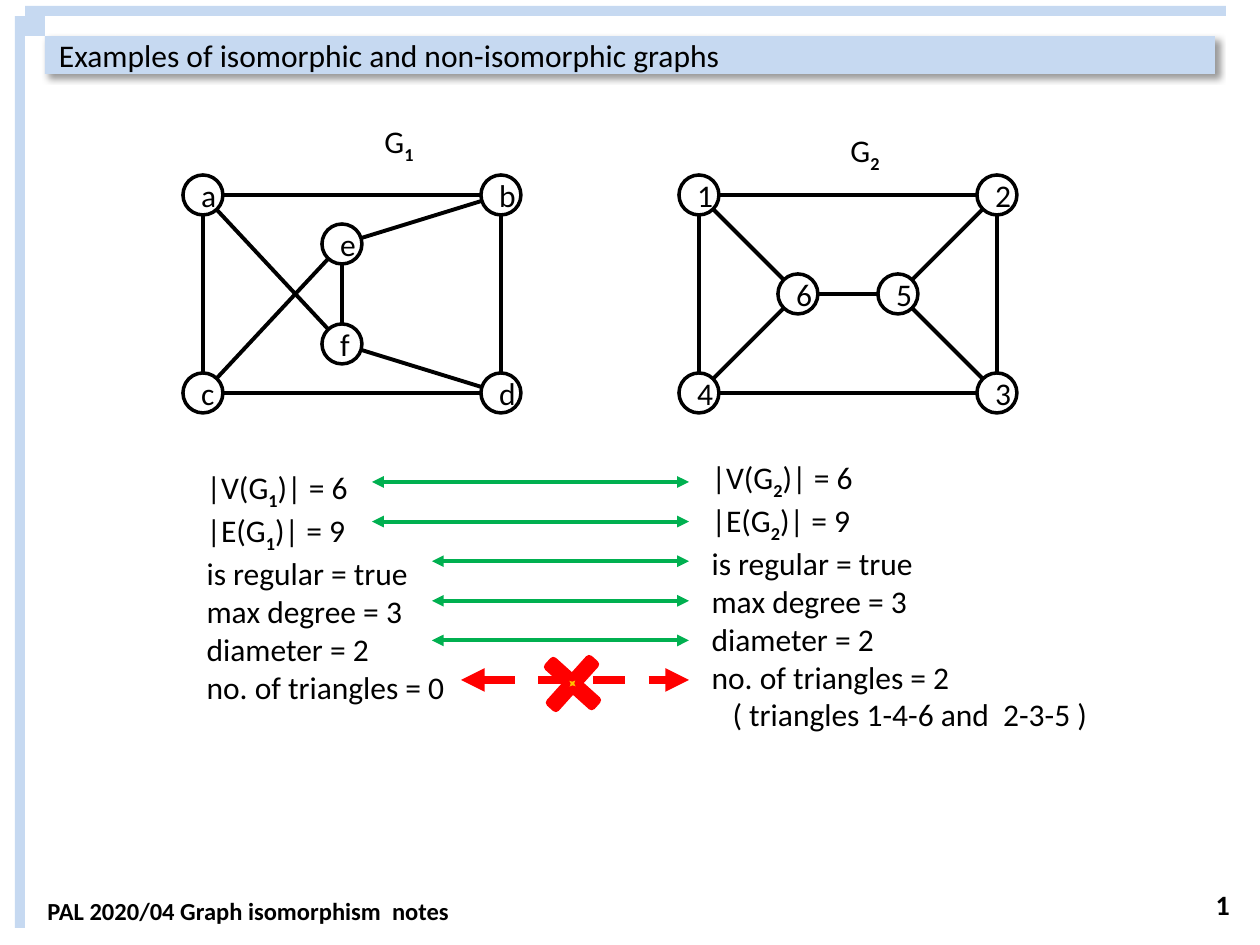
"""Build a slide comparing the invariants of two small graphs."""
from dataclasses import dataclass

from lxml.etree import SubElement
from pptx import Presentation
from pptx.dml.color import RGBColor
from pptx.enum.dml import MSO_LINE
from pptx.enum.shapes import MSO_CONNECTOR, MSO_SHAPE
from pptx.enum.text import MSO_ANCHOR, MSO_AUTO_SIZE, PP_ALIGN
from pptx.oxml import parse_xml
from pptx.oxml.ns import nsdecls, qn
from pptx.util import Emu, Pt


@dataclass(frozen=True)
class Theme:
    font: str = "Calibri"
    ink: str = "000000"
    paper: str = "FFFFFF"
    band: str = "C6D9F1"
    match: str = "00B050"
    differ: str = "FF0000"
    cross: str = "FFC000"
    body: int = 18
    number: int = 16
    footer: int = 14
    edge: float = 2.25
    outline: float = 2
    heavy: float = 4.5


T = Theme()
TITLE = "Examples of isomorphic and non-isomorphic graphs"
TITLE_BOX = (45, 36, 1170, 38)
FOOTER = "PAL 2020/04 Graph isomorphism  notes"
BARS = [(25, 6, 1201, 10), (15, 16, 10, 912), (25, 16, 20, 20)]
GRAPHS = [
    {
        "label": "G_1", "label_at": (372, 116), "origin": (203, 195),
        "nodes": {"a": (0, 0), "b": (298, 0), "c": (0, 198),
                  "d": (298, 198), "e": (139, 49), "f": (139, 149)},
        "edges": "ab cd db ca ef eb fd ce af",
        "list_box": (194, 462, 307, 242),
        "facts": ["|V(G_1)| = 6", "|E(G_1)| = 9", "is regular = true",
                  "max degree = 3", "diameter = 2", "no. of triangles = 0"],
        "note": None,
    },
    {
        "label": "G_2", "label_at": (838, 125), "origin": (699, 195),
        "nodes": {"1": (0, 0), "2": (298, 0), "3": (298, 198),
                  "4": (0, 198), "5": (199, 99), "6": (99, 99)},
        "edges": "12 43 32 41 65 52 53 46 16",
        "list_box": (699, 452, 476, 280),
        "facts": ["|V(G_2)| = 6", "|E(G_2)| = 9", "is regular = true",
                  "max degree = 3", "diameter = 2", "no. of triangles = 2"],
        "note": "( triangles 1-4-6 and  2-3-5 )",
    },
]
NODE = 40
ARROW_STARTS = [372, 372, 432, 432, 432, 461]
ARROW_END, ARROW_TOP, ARROW_SPAN = 689, 482, 198
CROSS_BOX = (543, 654, 59, 59)


def px(n):
    return Emu(round(n * 914400 / 126))


def place(sp, box):
    sp.left, sp.top, sp.width, sp.height = map(px, box)


def style(r, size=T.body, bold=False):
    r.font.name, r.font.size, r.font.bold = T.font, Pt(size), bold
    r.font.color.rgb = RGBColor.from_string(T.ink)


def write(p, text, size=T.body, bold=False):
    """Fill a paragraph; the character after each underscore is a subscript."""
    head, *rest = text.split("_")
    pieces = [(head, False)]
    for part in rest:
        pieces += [(part[0], True), (part[1:], False)]
    for piece, sub in pieces:
        if piece:
            r = p.add_run()
            r.text = piece
            style(r, size, bold or sub)
            if sub:
                r.font._element.set("baseline", "-25000")


def add_text(s, box, text, size=T.body, bold=False):
    tf = s.shapes.add_textbox(*map(px, box)).text_frame
    tf.word_wrap = True
    write(tf.paragraphs[0], text, size, bold)
    return tf


def add_shape(s, kind, box, fill, line=None, width=0):
    sp = s.shapes.add_shape(kind, *map(px, box))
    sp.shadow.inherit = False
    sp.fill.solid()
    sp.fill.fore_color.rgb = RGBColor.from_string(fill)
    if line:
        sp.line.color.rgb = RGBColor.from_string(line)
        sp.line.width = Pt(width)
    else:
        sp.line.fill.background()
    return sp


def add_line(s, start, end, color, width, dash=None, arrows=False):
    cx = s.shapes.add_connector(MSO_CONNECTOR.STRAIGHT, *map(px, start + end))
    cx.line.color.rgb = RGBColor.from_string(color)
    cx.line.width = Pt(width)
    if dash:
        cx.line.dash_style = dash
    if arrows:
        for tag in ("a:headEnd", "a:tailEnd"):
            SubElement(cx.line._get_or_add_ln(), qn(tag), type="triangle")
    SubElement(cx._element.spPr, qn("a:effectLst"))


def set_title(sp):
    place(sp, TITLE_BOX)
    sp.fill.solid()
    sp.fill.fore_color.rgb = RGBColor.from_string(T.band)
    sp.line.fill.background()
    sp._element.spPr.append(parse_xml(
        f'<a:effectLst {nsdecls("a")}><a:outerShdw blurRad="{Pt(4)}" '
        f'dist="{Pt(3)}" dir="2700000" algn="tl" rotWithShape="0">'
        f'<a:srgbClr val="{T.ink}"><a:alpha val="40000"/></a:srgbClr>'
        '</a:outerShdw></a:effectLst>'))
    tf = sp.text_frame
    tf.auto_size = MSO_AUTO_SIZE.NONE
    tf.vertical_anchor = MSO_ANCHOR.MIDDLE
    tf.margin_left = px(14)
    tf.margin_right = tf.margin_top = tf.margin_bottom = 0
    tf.text = TITLE
    tf.paragraphs[0].alignment = PP_ALIGN.LEFT
    style(tf.paragraphs[0].runs[0])


def set_facts(sp, graph):
    place(sp, graph["list_box"])
    tf = sp.text_frame
    tf.auto_size = MSO_AUTO_SIZE.NONE
    rows = [(fact, 0) for fact in graph["facts"]]
    if graph["note"]:
        rows.append((graph["note"], 21))
    for i, (text, indent) in enumerate(rows):
        p = tf.add_paragraph() if i else tf.paragraphs[0]
        p.space_before = Pt(0)
        pPr = p._p.get_or_add_pPr()
        pPr.set("marL", str(px(indent)))
        pPr.set("indent", "0")
        SubElement(pPr, qn("a:buNone"))
        write(p, text)


def draw_graph(s, graph):
    ox, oy = graph["origin"]
    at = {n: (ox + x, oy + y) for n, (x, y) in graph["nodes"].items()}
    for u, v in graph["edges"].split():
        add_line(s, at[u], at[v], T.ink, T.edge)
    for name, (x, y) in at.items():
        box = (x - NODE / 2, y - NODE / 2, NODE, NODE)
        sp = add_shape(s, MSO_SHAPE.OVAL, box, T.paper, T.ink, T.outline)
        p = sp.text_frame.paragraphs[0]
        p.alignment = PP_ALIGN.CENTER
        write(p, name)
    add_text(s, graph["label_at"] + (69, 50), graph["label"])


def draw_arrows(s):
    last = len(ARROW_STARTS) - 1
    for i, x in enumerate(ARROW_STARTS):
        y = ARROW_TOP + ARROW_SPAN * i / last
        look = (T.differ, T.heavy, MSO_LINE.DASH) if i == last else (T.match, T.edge)
        add_line(s, (x, y), (ARROW_END, y), *look, arrows=True)
    sp = add_shape(s, MSO_SHAPE.CROSS, CROSS_BOX, T.cross, T.differ, T.heavy)
    sp.adjustments[0] = 0.43
    sp.rotation = 312


def main():
    prs = Presentation()
    prs.slide_width, prs.slide_height = px(1260), px(945)
    s = prs.slides.add_slide(prs.slide_layouts[3])
    title, *lists = s.placeholders
    for box in BARS:
        add_shape(s, MSO_SHAPE.RECTANGLE, box, T.band)
    set_title(title)
    for sp, graph in zip(lists, GRAPHS):
        set_facts(sp, graph)
        draw_graph(s, graph)
    draw_arrows(s)
    add_text(s, (35, 890, 1181, 43), FOOTER, T.footer, True)
    tf = add_text(s, (948, 879, 294, 50), "1", T.number, True)
    tf.vertical_anchor = MSO_ANCHOR.MIDDLE
    tf.paragraphs[0].alignment = PP_ALIGN.RIGHT
    prs.save("out.pptx")


if __name__ == "__main__":
    main()
